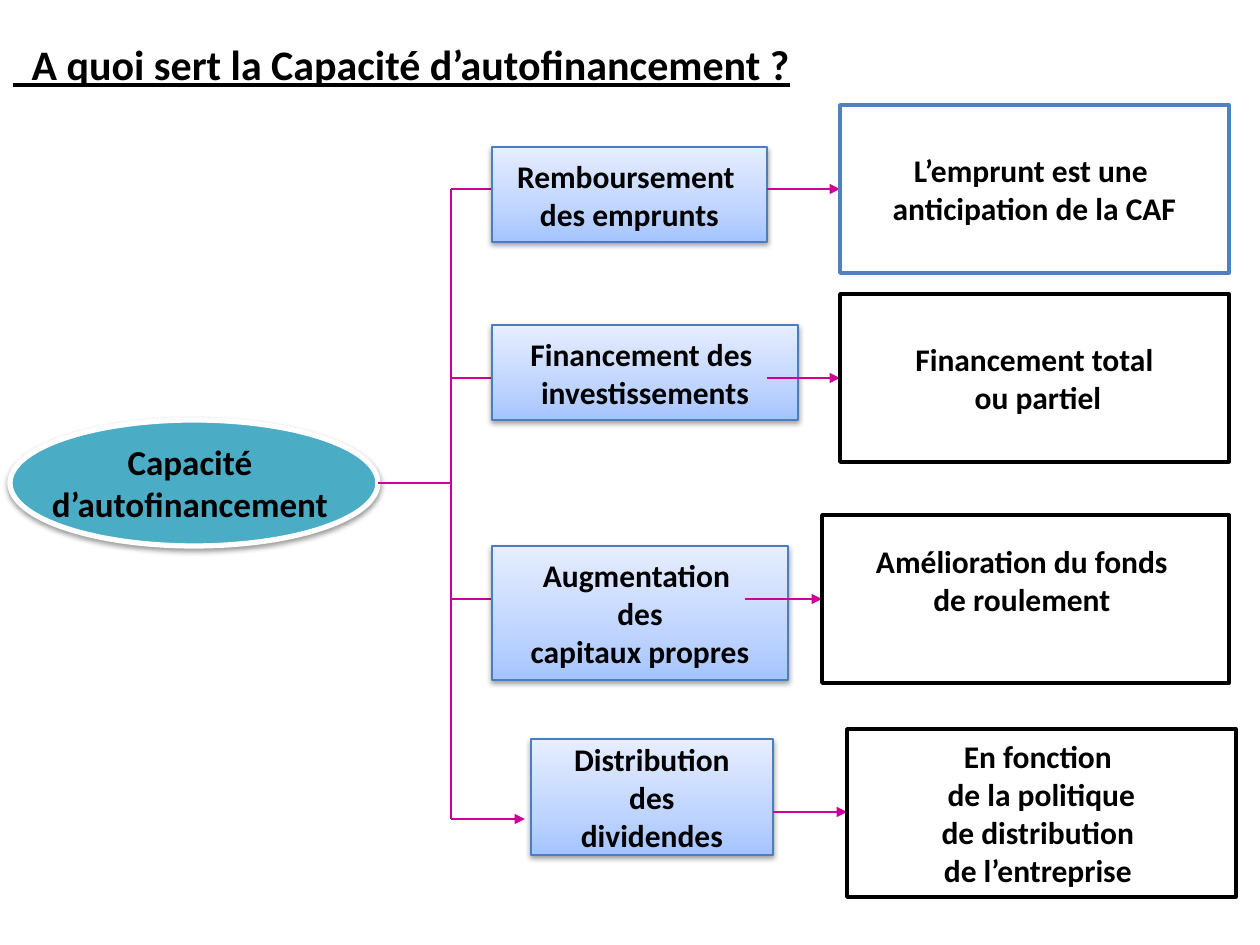
import copy

import pptx
import pptx.dml.color
import pptx.enum.dml
import pptx.enum.shapes
import pptx.enum.text
import pptx.oxml
import pptx.oxml.ns
import pptx.util

RGBColor = pptx.dml.color.RGBColor
BLACK = RGBColor(0x00, 0x00, 0x00)
WHITE = RGBColor(0xFF, 0xFF, 0xFF)
TEAL = RGBColor(0x4B, 0xAC, 0xC6)
MAGENTA = RGBColor(0xCC, 0x00, 0x99)
BLUE = RGBColor(0x4F, 0x81, 0xBD)
EDGE_BLUE = RGBColor(0x4B, 0x7E, 0xBC)
USE_GRADIENT = [
    (0, RGBColor(0xA4, 0xC4, 0xFF)),
    (0.35, RGBColor(0xBF, 0xD4, 0xFF)),
    (1, RGBColor(0xE6, 0xEE, 0xFF)),
]
PX = 914400 / 126
FONT = "Calibri"
RECTANGLE = pptx.enum.shapes.MSO_SHAPE.RECTANGLE
OVAL = pptx.enum.shapes.MSO_SHAPE.OVAL
NS = pptx.oxml.ns.nsdecls("a")
SHADOW = (
    f'<a:outerShdw {NS} blurRad="40000" dist="20000" dir="5400000" rotWithShape="0">'
    '<a:srgbClr val="000000"><a:alpha val="38000"/></a:srgbClr></a:outerShdw>'
)

prs = pptx.Presentation()
prs.slide_width = round(1260 * PX)
prs.slide_height = round(945 * PX)
slide = prs.slides.add_slide(prs.slide_layouts[5])


def add_box(kind, rect, lines, size, fill, edge, width, shadow=False):
    """Add a bold, centred box; a list as fill means gradient stops."""
    box = slide.shapes.add_shape(kind, *(round(v * PX) for v in rect))
    if isinstance(fill, list):
        box.fill.gradient()
        box.fill.gradient_angle = 90
        stops = box.element.spPr.find(".//" + pptx.oxml.ns.qn("a:gsLst"))
        stops.insert(1, copy.deepcopy(stops[0]))
        for stop, (position, color) in zip(box.fill.gradient_stops, fill):
            stop.position = position
            stop.color.rgb = color
    else:
        box.fill.solid()
        box.fill.fore_color.rgb = fill
    box.line.color.rgb = edge
    box.line.width = pptx.util.Pt(width)
    box.shadow.inherit = False
    if shadow:
        effects = box.element.spPr.find(pptx.oxml.ns.qn("a:effectLst"))
        effects.append(pptx.oxml.parse_xml(SHADOW))
    frame = box.text_frame
    frame.word_wrap = False
    frame.vertical_anchor = pptx.enum.text.MSO_ANCHOR.MIDDLE
    frame.text = "\n".join(lines)
    for paragraph in frame.paragraphs:
        paragraph.alignment = pptx.enum.text.PP_ALIGN.CENTER
        paragraph.font.name = FONT
        paragraph.font.size = pptx.util.Pt(size)
        paragraph.font.bold = True
        paragraph.font.color.rgb = BLACK
    return box


def add_line(x1, y1, x2, y2, arrow=True):
    line = slide.shapes.add_connector(
        pptx.enum.shapes.MSO_CONNECTOR.STRAIGHT, *(round(v * PX) for v in (x1, y1, x2, y2))
    )
    line.line.color.rgb = MAGENTA
    line.line.width = pptx.util.Pt(1.5)
    if arrow:
        line.line._get_or_add_ln().append(
            pptx.oxml.parse_xml(f'<a:tailEnd {NS} type="triangle"/>')
        )
    line.element.spPr.append(pptx.oxml.parse_xml(f"<a:effectLst {NS}/>"))


# Title
title = slide.shapes.title
title.left, title.top, title.width, title.height = (round(v * PX) for v in (0, 32, 1176, 63))
title.text_frame.text = "  A quoi sert la Capacité d’autofinancement ?"
title.text_frame.vertical_anchor = pptx.enum.text.MSO_ANCHOR.TOP
heading = title.text_frame.paragraphs[0]
heading.alignment = pptx.enum.text.PP_ALIGN.LEFT
heading.font.name = FONT
heading.font.size = pptx.util.Pt(24)
heading.font.bold = True
heading.font.underline = True
heading.font.color.rgb = BLACK

# Source of the funds and the tree of branches
add_box(OVAL, (10, 420, 368, 126), ["Capacité ", "d’autofinancement "], 20, TEAL, WHITE, 3, True)
TRUNK_X = 451
add_line(378, 483, TRUNK_X, 483, arrow=False)
add_line(TRUNK_X, 189, TRUNK_X, 819, arrow=False)
for branch_y in (189, 378, 599, 819):
    add_line(TRUNK_X, branch_y, 525, branch_y)

# Each use of the funds: its box, its arrow (start, height), its comment
NOTE_HEIGHT = 168
uses = [
    (["Remboursement ", "des emprunts"], (492, 147, 275, 95), (767, 189),
     ["L’emprunt est une ", "anticipation de la CAF"], (840, 105, 389), BLUE),
    (["Financement des ", "investissements"], (492, 325, 306, 95), (767, 378),
     ["Financement total", " ou partiel"], (840, 294, 389), BLACK),
    (["Augmentation ", "des", "capitaux propres"], (492, 546, 296, 134), (745, 599),
     ["Amélioration du fonds ", "de roulement "], (822, 515, 407), BLACK),
    (["Distribution", " des ", "dividendes"], (531, 739, 242, 116), (773, 812),
     ["En fonction ", "de la politique", "de distribution ", "de l’entreprise "],
     (847, 729, 389), BLACK),
]
notes = []
for use, use_rect, (arrow_x, arrow_y), note, (note_x, note_y, note_width), edge in uses:
    add_box(RECTANGLE, use_rect, use, 18, USE_GRADIENT, EDGE_BLUE, 0.75, True)
    add_line(arrow_x, arrow_y, note_x, arrow_y)
    note_rect = (note_x, note_y, note_width, NOTE_HEIGHT)
    notes.append(add_box(RECTANGLE, note_rect, note, 18, WHITE, edge, 2))

# The comment on working capital sits above the middle of its box
notes[2].text_frame.margin_bottom = round(44 * PX)

prs.save("out.pptx")
